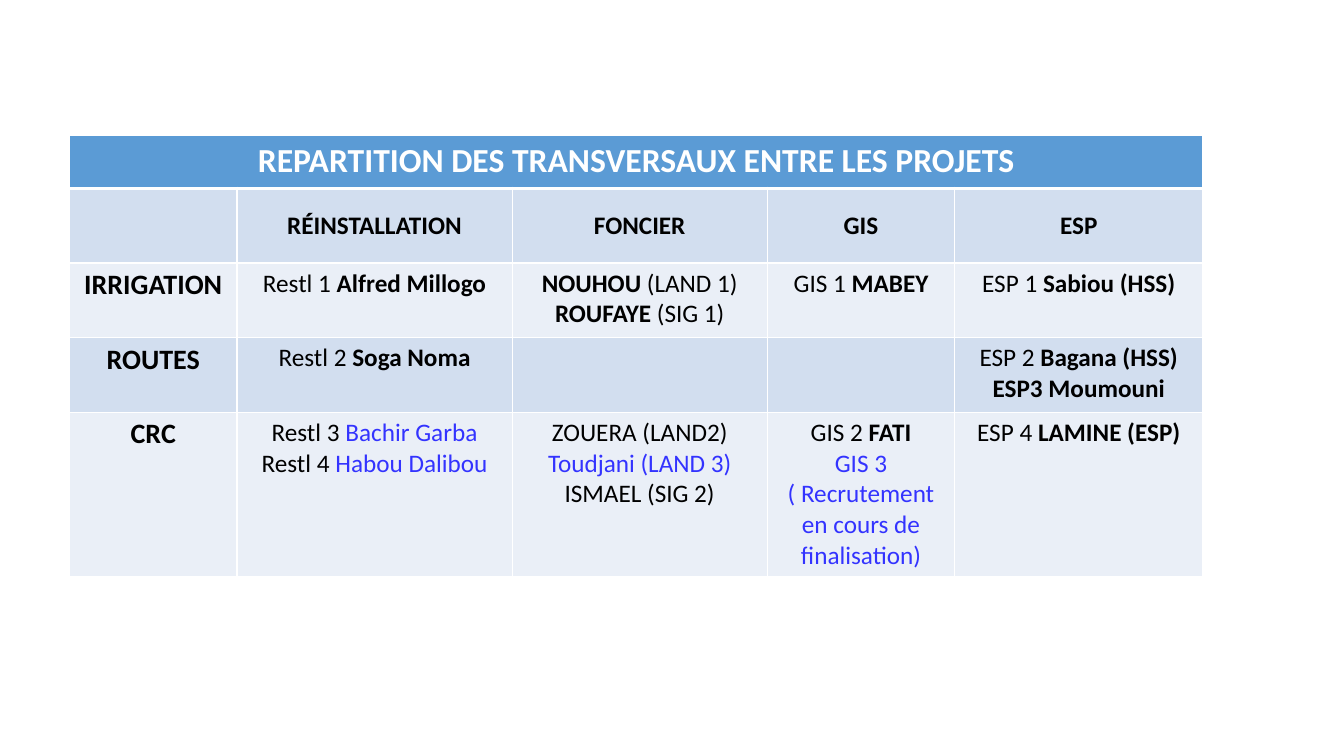
from lxml.etree import SubElement
from pptx import Presentation
from pptx.dml.color import RGBColor
from pptx.enum.text import MSO_ANCHOR, PP_ALIGN
from pptx.oxml.ns import qn
from pptx.util import Inches, Pt

HEADER, BAND_DARK, BAND_LIGHT = "5B9BD5", "D2DEEF", "EAEFF7"
WHITE, BLACK, BLUE = "FFFFFF", "000000", "3333FF"

PLAIN = {"size": Pt(18), "bold": False, "color": BLACK}
BOLD = {**PLAIN, "bold": True}
NEW = {**PLAIN, "color": BLUE}
PROJECT = {**BOLD, "size": Pt(20)}
TITLE = {"size": Pt(24), "bold": True, "color": WHITE}

COL_WIDTHS = [1.66, 2.73, 2.53, 1.86, 2.46]
ROW_HEIGHTS = [0.53, 0.74, 0.74, 0.74, 1.38]

BANNER = "REPARTITION DES TRANSVERSAUX ENTRE LES PROJETS"
HEADINGS = ["RÉINSTALLATION", "FONCIER", "GIS", "ESP"]

# Project -> one cell per heading; a cell is a list of lines, a line a list of runs
PROJECTS = {
    "IRRIGATION": [
        [[("Restl 1 ", PLAIN), ("Alfred Millogo", BOLD)]],
        [[("NOUHOU", BOLD), (" (LAND 1)", PLAIN)],
         [("ROUFAYE", BOLD), (" (SIG 1)", PLAIN)]],
        [[("GIS 1 ", PLAIN), ("MABEY", BOLD)]],
        [[("ESP 1 ", PLAIN), ("Sabiou (HSS)", BOLD)]],
    ],
    "ROUTES": [
        [[("Restl 2 ", PLAIN), ("Soga Noma", BOLD)]],
        [],
        [],
        [[("ESP 2 ", PLAIN), ("Bagana (HSS)", BOLD)],
         [("ESP3 Moumouni", BOLD)]],
    ],
    "CRC": [
        [[("Restl 3 ", PLAIN), ("Bachir Garba", NEW)],
         [("Restl 4 ", PLAIN), ("Habou Dalibou", NEW)]],
        [[("ZOUERA (LAND2)", PLAIN)],
         [("Toudjani (LAND 3)", NEW)],
         [("ISMAEL (SIG 2)", PLAIN)]],
        [[("GIS 2 ", PLAIN), ("FATI", BOLD)],
         [("GIS 3", NEW)],
         [("( Recrutement en cours de finalisation)", NEW)]],
        [[("ESP 4 ", PLAIN), ("LAMINE (ESP)", BOLD)]],
    ],
}


def rgb(value):
    return RGBColor.from_string(value)


class SlideBuilder:
    def __init__(self, slide, font="Calibri"):
        self.slide = slide
        self.font = font

    def table(self, left, top, col_widths, row_heights):
        frame = self.slide.shapes.add_table(
            len(row_heights), len(col_widths), Inches(left), Inches(top),
            Inches(sum(col_widths)), Inches(sum(row_heights)))
        tbl = frame.table
        tbl.first_row = tbl.horz_banding = False
        for col, width in zip(tbl.columns, col_widths):
            col.width = Inches(width)
        for row, height in zip(tbl.rows, row_heights):
            row.height = Inches(height)
        return tbl

    def cell(self, cell, lines, fill, anchor=MSO_ANCHOR.TOP, bottom=1):
        cell.fill.solid()
        cell.fill.fore_color.rgb = rgb(fill)
        cell.vertical_anchor = anchor
        self.borders(cell, {"L": 1, "R": 1, "T": 1, "B": bottom})
        tf = cell.text_frame
        for i, runs in enumerate(lines):
            p = tf.add_paragraph() if i else tf.paragraphs[0]
            p.alignment = PP_ALIGN.CENTER
            for text, style in runs:
                self.run(p, text, style)

    def run(self, p, text, style):
        r = p.add_run()
        r.text = text
        r.font.name = self.font
        r.font.color.rgb = rgb(style["color"])
        for name in ("size", "bold"):
            setattr(r.font, name, style[name])

    def borders(self, cell, widths):
        """Draw white sides, given their widths in points by side letter."""
        tc_pr = cell._tc.get_or_add_tcPr()
        for i, (side, width) in enumerate(widths.items()):
            ln = SubElement(tc_pr, qn(f"a:ln{side}"), w=str(Pt(width)))
            fill = SubElement(ln, qn("a:solidFill"))
            SubElement(fill, qn("a:srgbClr"), val=WHITE)
            tc_pr.insert(i, ln)


def main():
    prs = Presentation()
    prs.slide_width, prs.slide_height = Inches(13.33), Inches(7.5)
    s = SlideBuilder(prs.slides.add_slide(prs.slide_layouts[6]))
    tbl = s.table(0.69, 1.34, COL_WIDTHS, ROW_HEIGHTS)

    tbl.cell(0, 0).merge(tbl.cell(0, len(COL_WIDTHS) - 1))
    s.cell(tbl.cell(0, 0), [[(BANNER, TITLE)]], HEADER, bottom=3)

    s.cell(tbl.cell(1, 0), [], BAND_DARK)
    for c, heading in enumerate(HEADINGS, 1):
        s.cell(tbl.cell(1, c), [[(heading, BOLD)]], BAND_DARK, MSO_ANCHOR.MIDDLE)

    for r, (project, cells) in enumerate(PROJECTS.items(), 2):
        fill = BAND_DARK if r % 2 else BAND_LIGHT
        for c, lines in enumerate([[[(project, PROJECT)]], *cells]):
            s.cell(tbl.cell(r, c), lines, fill)

    prs.save("out.pptx")


if __name__ == "__main__":
    main()
